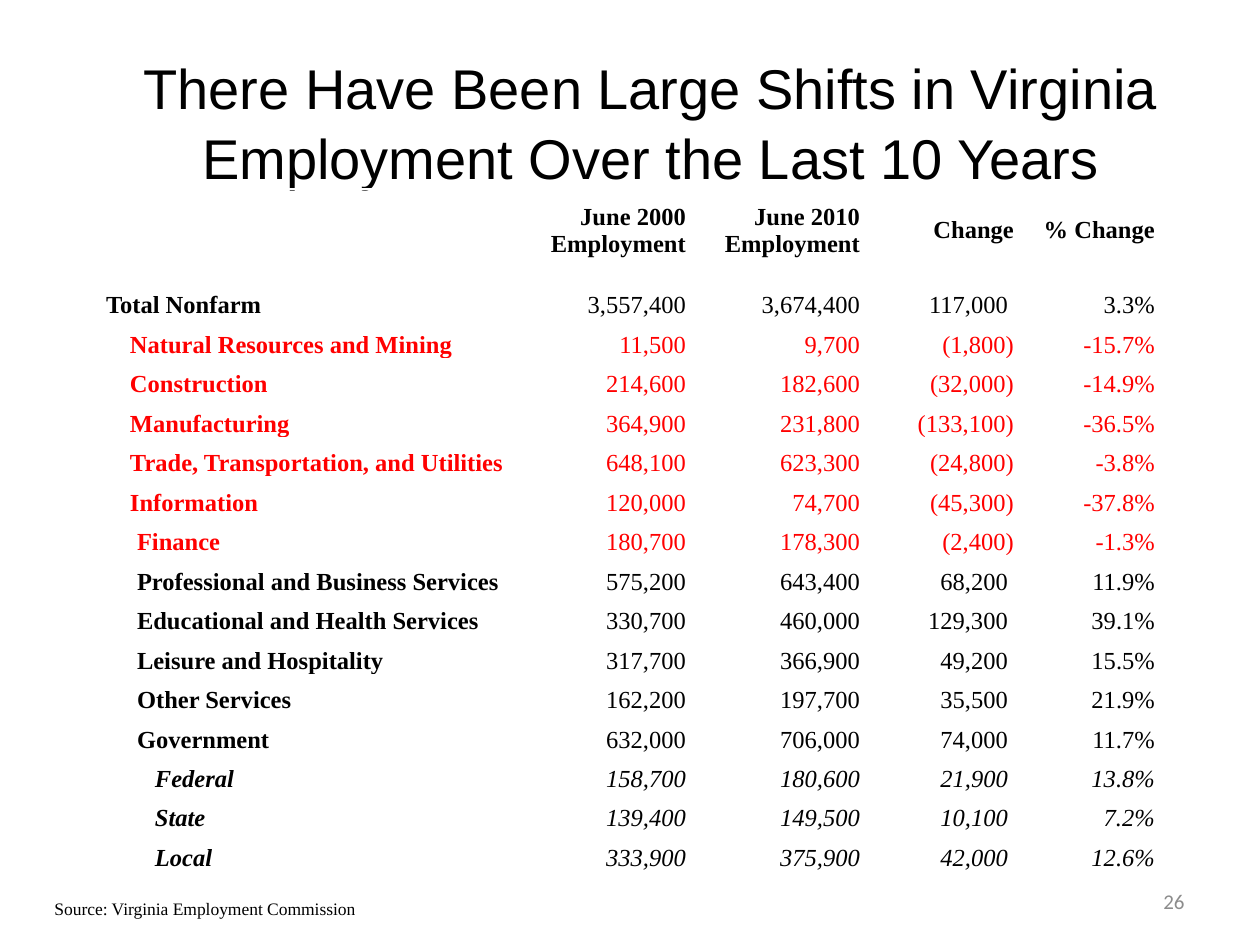
import pptx
import pptx.util
import pptx.dml.color
import pptx.enum.text

COLORS = {"black": "000000", "red": "FF0000", "gray": "8C8C8C"}
SERIF = "Times New Roman"
PX = 914400 // 126
ALIGN = pptx.enum.text.PP_ALIGN
ANCHOR = pptx.enum.text.MSO_ANCHOR

TITLE = "There Have Been Large Shifts in Virginia Employment Over the Last 10 Years"
SOURCE = "Source: Virginia Employment Commission"
PAGE = "26"

HEADER = ["", "June 2000 Employment", "June 2010 Employment", "Change", "% Change"]
ROWS = [
    (0, "Total Nonfarm", "3,557,400", "3,674,400", "117,000", "3.3%"),
    (24, "Natural Resources and Mining", "11,500", "9,700", "(1,800)", "-15.7%"),
    (24, "Construction", "214,600", "182,600", "(32,000)", "-14.9%"),
    (24, "Manufacturing", "364,900", "231,800", "(133,100)", "-36.5%"),
    (24, "Trade, Transportation, and Utilities", "648,100", "623,300", "(24,800)", "-3.8%"),
    (24, "Information", "120,000", "74,700", "(45,300)", "-37.8%"),
    (31, "Finance", "180,700", "178,300", "(2,400)", "-1.3%"),
    (31, "Professional and Business Services", "575,200", "643,400", "68,200", "11.9%"),
    (31, "Educational and Health Services", "330,700", "460,000", "129,300", "39.1%"),
    (31, "Leisure and Hospitality", "317,700", "366,900", "49,200", "15.5%"),
    (31, "Other Services", "162,200", "197,700", "35,500", "21.9%"),
    (31, "Government", "632,000", "706,000", "74,000", "11.7%"),
    (49, "Federal", "158,700", "180,600", "21,900", "13.8%"),
    (49, "State", "139,400", "149,500", "10,100", "7.2%"),
    (49, "Local", "333,900", "375,900", "42,000", "12.6%"),
]
COL_WIDTHS = [412, 170, 174, 154, 141]
TABLE_LEFT, TABLE_TOP, TABLE_HEIGHT = 105, 189, 683
HEADER_HEIGHT, TOTAL_HEIGHT = 82, 48
SUB_INDENT = 49
CHANGE_COL = 3
PAREN_WIDTH = 6


def px(n):
    return pptx.util.Emu(round(n * PX))


def add_run(p, text, size, font, color, bold=False, italic=False):
    r = p.add_run()
    r.text = text
    r.font.size = pptx.util.Pt(size)
    r.font.name = font
    r.font.bold = bold
    r.font.italic = italic
    r.font.color.rgb = pptx.dml.color.RGBColor.from_string(COLORS[color])


def add_text(s, box, text, size, font, color, align, anchor, wrap=True):
    tf = s.shapes.add_textbox(*map(px, box)).text_frame
    tf.word_wrap = wrap
    tf.vertical_anchor = anchor
    p = tf.paragraphs[0]
    p.alignment = align
    add_run(p, text, size, font, color)
    return p


def fill_cell(cell, text, color, align, anchor, bold, italic=False, left=0, right=0):
    cell.fill.background()
    cell.vertical_anchor = anchor
    cell.margin_left, cell.margin_right = px(1 + left), px(1 + right)
    cell.margin_top, cell.margin_bottom = px(1), 0
    if text:
        p = cell.text_frame.paragraphs[0]
        p.alignment = align
        add_run(p, text, 14, SERIF, color, bold, italic)


def add_employment_table(s):
    box = (TABLE_LEFT, TABLE_TOP, sum(COL_WIDTHS), TABLE_HEIGHT)
    table = s.shapes.add_table(len(ROWS) + 1, len(HEADER), *map(px, box)).table
    table.first_row = table.horz_banding = False
    for col, width in zip(table.columns, COL_WIDTHS):
        col.width = px(width)
    sector_height = (TABLE_HEIGHT - HEADER_HEIGHT - TOTAL_HEIGHT) / (len(ROWS) - 1)
    heights = [HEADER_HEIGHT, TOTAL_HEIGHT] + [sector_height] * (len(ROWS) - 1)
    for row, height in zip(table.rows, heights):
        row.height = px(height)

    for j, text in enumerate(HEADER):
        fill_cell(table.cell(0, j), text, "black", ALIGN.RIGHT, ANCHOR.MIDDLE, True)
    for i, (indent, *values) in enumerate(ROWS, 1):
        loss = values[CHANGE_COL].startswith("(")
        for j, text in enumerate(values):
            fill_cell(
                table.cell(i, j), text, "red" if loss else "black",
                ALIGN.RIGHT if j else ALIGN.LEFT, ANCHOR.BOTTOM,
                bold=j == 0, italic=indent == SUB_INDENT,
                left=0 if j else indent,
                right=PAREN_WIDTH if j == CHANGE_COL and not loss else 0)


prs = pptx.Presentation()
prs.slide_width, prs.slide_height = px(1260), px(945)
s = prs.slides.add_slide(prs.slide_layouts[6])
add_text(s, (903, 876, 294, 50), PAGE, 12, "Calibri", "gray", ALIGN.RIGHT, ANCHOR.MIDDLE)
title = add_text(s, (84, 42, 1134, 158), TITLE, 32, "Arial", "black", ALIGN.CENTER, ANCHOR.MIDDLE)
title.line_spacing = 1.04
add_text(s, (42, 892, 333, 34), SOURCE, 10, SERIF, "black", ALIGN.LEFT, ANCHOR.TOP, wrap=False)
add_employment_table(s)
prs.save("out.pptx")
